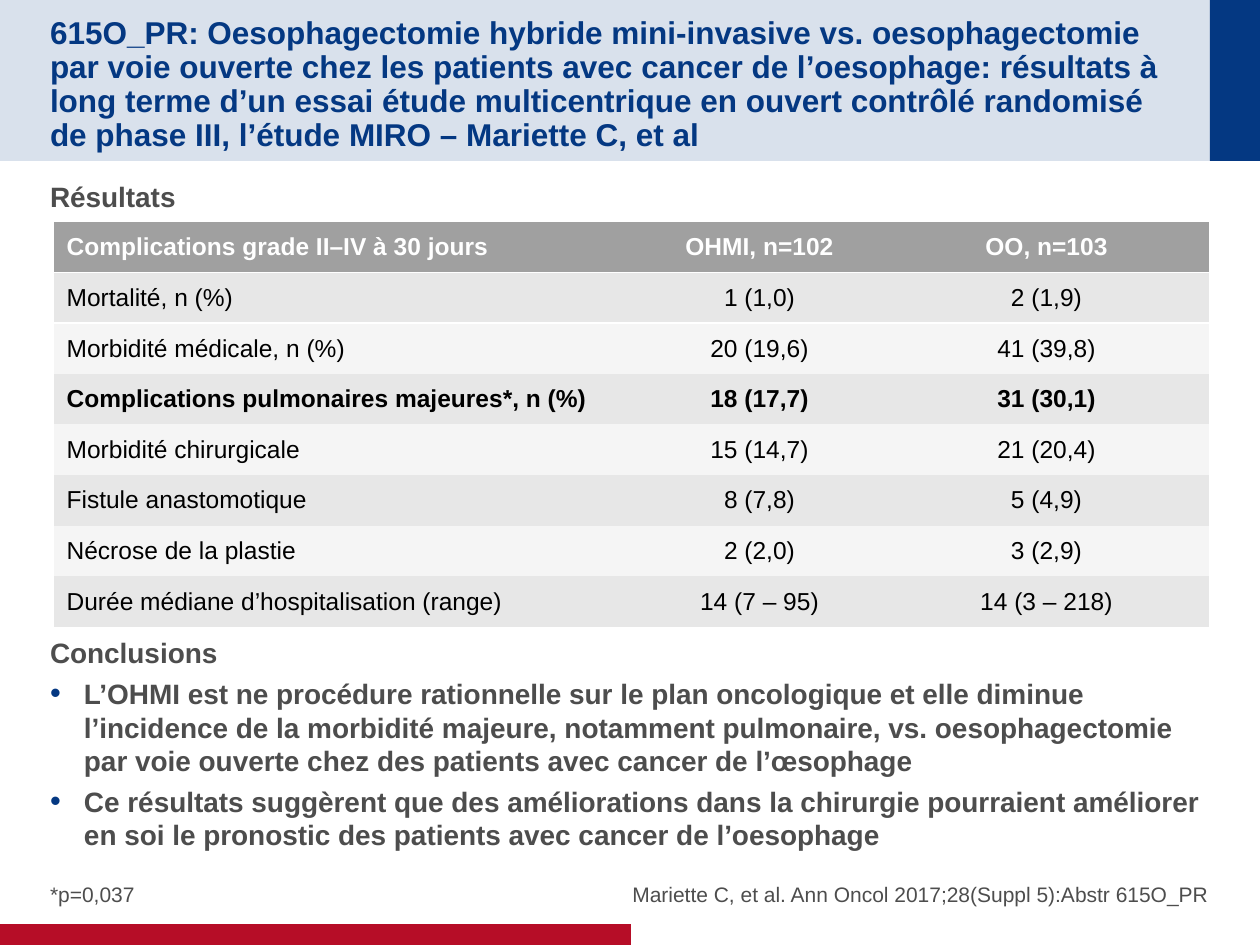
from pptx import Presentation
from pptx.dml.color import RGBColor
from pptx.enum.shapes import MSO_SHAPE
from pptx.enum.text import MSO_ANCHOR, MSO_AUTO_SIZE, PP_ALIGN
from pptx.oxml import parse_xml
from pptx.oxml.ns import nsdecls, qn
from pptx.util import Emu, Pt

RECT = MSO_SHAPE.RECTANGLE
TOP, MID, LOW = MSO_ANCHOR.TOP, MSO_ANCHOR.MIDDLE, MSO_ANCHOR.BOTTOM
LEFT, MEAN, RIGHT = PP_ALIGN.LEFT, PP_ALIGN.CENTER, PP_ALIGN.RIGHT
FIXED = MSO_AUTO_SIZE.NONE
PX = 914400 / 126
NAVY, GREY = "043882", "4D4D4D"
PLAIN = "{2D5ABB26-0587-4C30-8999-92F81FD0307C}"


def hue(code):
    return RGBColor.from_string(code)


def write(par, text, size=16, color=GREY, bold=False, align=LEFT,
          after=0, line=1.0, bullet=False):
    par.alignment, par.line_spacing = align, line
    par.space_before, par.space_after = Pt(0), Pt(after)
    props = par._p.get_or_add_pPr()
    gap = int(34 * PX) if bullet else 0
    props.set("marL", str(gap))
    props.set("indent", str(-gap))
    if bullet:
        ns = nsdecls("a")
        props.append(parse_xml(f'<a:buClr {ns}><a:srgbClr val="{NAVY}"/></a:buClr>'))
        props.append(parse_xml(f'<a:buSzPct {ns} val="110000"/>'))
        props.append(parse_xml(f'<a:buFont {ns} typeface="Arial"/>'))
        props.append(parse_xml(f'<a:buChar {ns} char="•"/>'))
    else:
        props.append(parse_xml(f'<a:buNone {nsdecls("a")}/>'))
    run = par.add_run()
    run.text = text
    run.font.name, run.font.size, run.font.bold = "Arial", Pt(size), bold
    run.font.color.rgb = hue(color)


deck = Presentation()
deck.slide_width, deck.slide_height = Emu(int(1260 * PX)), Emu(int(945 * PX))
slide = deck.slides.add_slide(deck.slide_layouts[4])

bars = [
    (0, 0, 1260, 161, "D9E1EC"),
    (1210, 0, 50, 161, NAVY),
    (0, 924, 631, 21, "B60D27"),
]
for spot, (*box, color) in enumerate(bars):
    bar = slide.shapes.add_shape(RECT, *(Emu(int(v * PX)) for v in box))
    bar.shadow.inherit = False
    bar.fill.solid()
    bar.fill.fore_color.rgb = hue(color)
    bar.line.fill.background()
    slide.shapes._spTree.insert(2 + spot, bar._element)

title = ("615O_PR: Oesophagectomie hybride mini-invasive vs. oesophagectomie par voie "
         "ouverte chez les patients avec cancer de l’oesophage: résultats à long terme "
         "d’un essai étude multicentrique en ouvert contrôlé randomisé de phase III, "
         "l’étude MIRO – Mariette C, et al")
points = [
    "L’OHMI est ne procédure rationnelle sur le plan oncologique et elle diminue "
    "l’incidence de la morbidité majeure, notamment pulmonaire, vs. oesophagectomie "
    "par voie ouverte chez des patients avec cancer de l’œsophage",
    "Ce résultats suggèrent que des améliorations dans la chirurgie pourraient améliorer "
    "en soi le pronostic des patients avec cancer de l’oesophage",
]
head = dict(bold=True, after=4)
blocks = [
    (0, (50, 28, 1135, 114), MID, [(title, dict(size=18, color=NAVY, bold=True, line=0.9))]),
    (1, (50, 180, 1159, 36), TOP, [("Résultats", head)]),
    (2, (50, 636, 1159, 220), TOP,
     [("Conclusions", head)] + [(point, dict(head, bullet=True)) for point in points]),
    (3, (50, 840, 570, 67), LOW, [("*p=0,037", dict(size=12))]),
    (4, (559, 840, 650, 67), LOW,
     [("Mariette C, et al. Ann Oncol 2017;28(Suppl 5):Abstr 615O_PR",
       dict(size=12, align=RIGHT))]),
]
for key, box, anchor, lines in blocks:
    shape = slide.placeholders[key]
    shape.left, shape.top, shape.width, shape.height = (Emu(int(v * PX)) for v in box)
    frame = shape.text_frame
    frame.word_wrap, frame.auto_size, frame.vertical_anchor = True, FIXED, anchor
    frame.margin_left = frame.margin_right = frame.margin_top = frame.margin_bottom = 0
    for i, (text, form) in enumerate(lines):
        write(frame.add_paragraph() if i else frame.paragraphs[0], text, **form)

rows = [
    ("Complications grade II–IV à 30 jours", "OHMI, n=102", "OO, n=103"),
    ("Mortalité, n (%)", "1 (1,0)", "2 (1,9)"),
    ("Morbidité médicale, n (%)", "20 (19,6)", "41 (39,8)"),
    ("Complications pulmonaires majeures*, n (%)", "18 (17,7)", "31 (30,1)"),
    ("Morbidité chirurgicale", "15 (14,7)", "21 (20,4)"),
    ("Fistule anastomotique", "8 (7,8)", "5 (4,9)"),
    ("Nécrose de la plastie", "2 (2,0)", "3 (2,9)"),
    ("Durée médiane d’hospitalisation (range)", "14 (7 – 95)", "14 (3 – 218)"),
]
place = (Emu(int(v * PX)) for v in (54, 222, 1155, 405))
table = slide.shapes.add_table(len(rows), 3, *place).table
table._tbl.tblPr.find(qn("a:tableStyleId")).text = PLAIN
for col, width in zip(table.columns, (581, 249, 325)):
    col.width = Emu(int(width * PX))
for r, row in enumerate(rows):
    fill = "A0A0A0" if r == 0 else "E7E7E7" if r % 2 else "F5F5F5"
    for c, text in enumerate(row):
        cell = table.cell(r, c)
        cell.vertical_anchor = MID
        write(cell.text_frame.paragraphs[0], text, size=14, bold=r in (0, 3),
              color="000000" if r else "FFFFFF", align=MEAN if c else LEFT)
        if r < 2:
            side = "lnT" if r else "lnB"
            cell._tc.get_or_add_tcPr().append(parse_xml(
                f'<a:{side} {nsdecls("a")} w="12700"><a:solidFill>'
                f'<a:srgbClr val="FFFFFF"/></a:solidFill></a:{side}>'))
        cell.fill.solid()
        cell.fill.fore_color.rgb = hue(fill)

deck.save("out.pptx")
